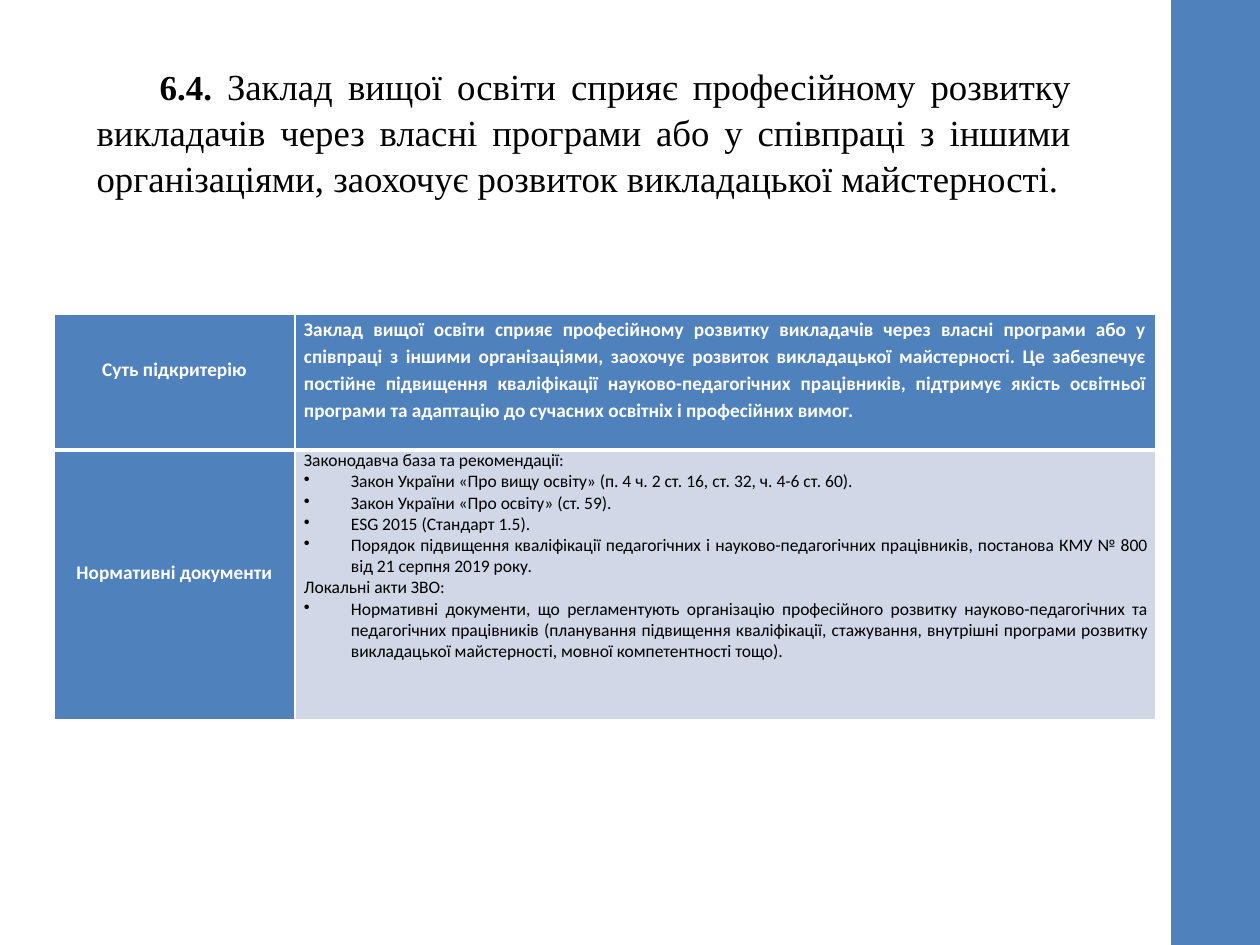
from dataclasses import dataclass

from lxml import etree
from pptx import Presentation
from pptx import util as u
from pptx.dml.color import RGBColor
from pptx.enum import shapes, text
from pptx.oxml import ns


@dataclass(frozen=True)
class Theme:
    blue: str = "4F81BD"
    pale: str = "D0D8E8"
    white: str = "FFFFFF"
    black: str = "000000"
    title_font: str = "Times New Roman"
    table_font: str = "Calibri"
    number_size: int = 20
    title_size: int = 21
    heading_size: int = 11
    list_size: int = 10


THEME = Theme()

NUMBER = "6.4. "
TITLE = (
    "Заклад вищої освіти сприяє професійному розвитку викладачів через власні "
    "програми або у співпраці з іншими організаціями, заохочує розвиток "
    "викладацької майстерності."
)
ESSENCE = TITLE + (
    " Це забезпечує постійне підвищення кваліфікації науково-педагогічних "
    "працівників, підтримує якість освітньої програми та адаптацію до сучасних "
    "освітніх і професійних вимог."
)
DOCUMENTS = {
    "Законодавча база та рекомендації:": [
        "Закон України «Про вищу освіту» (п. 4 ч. 2 ст. 16, ст. 32, ч. 4-6 ст. 60).",
        "Закон України «Про освіту» (ст. 59).",
        "ESG 2015 (Стандарт 1.5).",
        "Порядок підвищення кваліфікації педагогічних і науково-педагогічних "
        "працівників, постанова КМУ № 800 від 21 серпня 2019 року.",
    ],
    "Локальні акти ЗВО:": [
        "Нормативні документи, що регламентують організацію професійного розвитку "
        "науково-педагогічних та педагогічних працівників (планування підвищення "
        "кваліфікації, стажування, внутрішні програми розвитку викладацької "
        "майстерності, мовної компетентності тощо).",
    ],
}


def px(length):
    return u.Emu(round(length * 914400 / 126))


def style_font(font, face, size, color, bold=False):
    font.name, font.size, font.bold = face, u.Pt(size), bold
    font.color.rgb = RGBColor.from_string(color)


def add_title(slide):
    title = slide.shapes.title
    title.left, title.top, title.width, title.height = map(px, (84, 55, 1000, 208))
    frame = title.text_frame
    frame.word_wrap = True
    frame.auto_size = text.MSO_AUTO_SIZE.NONE
    frame.vertical_anchor = text.MSO_ANCHOR.TOP
    paragraph = frame.paragraphs[0]
    paragraph.alignment = text.PP_ALIGN.JUSTIFY
    paragraph.line_spacing = 1.05
    for words, size, bold in (
        ("\t" + NUMBER, THEME.number_size, True),
        (TITLE, THEME.title_size, False),
    ):
        run = paragraph.add_run()
        run.text = words
        style_font(run.font, THEME.title_font, size, THEME.black, bold)


def add_side_band(slide):
    band = slide.shapes.add_shape(
        shapes.MSO_SHAPE.RECTANGLE, *map(px, (743, 428, 945, 89))
    )
    band.rotation = 90
    band.shadow.inherit = False
    band.fill.solid()
    band.fill.fore_color.rgb = RGBColor.from_string(THEME.blue)
    band.line.fill.background()


def set_borders(cell, top, bottom):
    properties = cell._tc.get_or_add_tcPr()
    for side, width in (("L", 1), ("R", 1), ("T", top), ("B", bottom)):
        line = etree.SubElement(
            properties, ns.qn(f"a:ln{side}"), w=str(u.Pt(width))
        )
        fill = etree.SubElement(line, ns.qn("a:solidFill"))
        etree.SubElement(fill, ns.qn("a:srgbClr"), val=THEME.white)


def format_cell(cell, color, bottom_margin=0):
    cell.fill.solid()
    cell.fill.fore_color.rgb = RGBColor.from_string(color)
    cell.margin_left = cell.margin_right = px(9)
    cell.margin_top, cell.margin_bottom = 0, px(bottom_margin)


def write_heading(cell, words, alignment):
    paragraph = cell.text_frame.paragraphs[0]
    paragraph.text = words
    paragraph.alignment = alignment
    paragraph.line_spacing = 1.15
    style_font(
        paragraph.runs[0].font, THEME.table_font, THEME.heading_size, THEME.white, True
    )


def write_label(cell, words):
    """Centre a row label slightly above the middle of its cell."""
    format_cell(cell, THEME.blue, bottom_margin=27)
    cell.vertical_anchor = text.MSO_ANCHOR.MIDDLE
    write_heading(cell, words, text.PP_ALIGN.CENTER)


def add_bullet(paragraph):
    properties = paragraph._p.get_or_add_pPr()
    properties.set("marL", str(px(47)))
    properties.set("indent", str(px(-47)))
    etree.SubElement(properties, ns.qn("a:buChar"), char="•")
    tabs = etree.SubElement(properties, ns.qn("a:tabLst"))
    etree.SubElement(tabs, ns.qn("a:tab"), pos=str(px(63)), algn="l")


def write_documents(cell):
    format_cell(cell, THEME.pale)
    lines = []
    for group, items in DOCUMENTS.items():
        lines += [(group, False)] + [(item, True) for item in items]
    frame = cell.text_frame
    frame.text = "\n".join(words for words, _ in lines)
    for paragraph, (_, bulleted) in zip(frame.paragraphs, lines):
        paragraph.alignment = text.PP_ALIGN.JUSTIFY
        if bulleted:
            add_bullet(paragraph)
        style_font(
            paragraph.runs[0].font, THEME.table_font, THEME.list_size, THEME.black
        )


def add_criterion_table(slide):
    widths, heights = (241, 861), (136, 270)
    table = slide.shapes.add_table(
        2, 2, *map(px, (54, 314, sum(widths), sum(heights)))
    ).table
    table.horz_banding = False
    for column, width in zip(table.columns, widths):
        column.width = px(width)
    for row, height, top, bottom in zip(table.rows, heights, (1, 3), (3, 1)):
        row.height = px(height)
        for cell in row.cells:
            set_borders(cell, top, bottom)

    write_label(table.cell(0, 0), "Суть підкритерію")
    essence = table.cell(0, 1)
    format_cell(essence, THEME.blue)
    write_heading(essence, ESSENCE, text.PP_ALIGN.JUSTIFY)
    write_label(table.cell(1, 0), "Нормативні документи")
    write_documents(table.cell(1, 1))


def main():
    deck = Presentation()
    deck.slide_width, deck.slide_height = px(1260), px(945)
    slide = deck.slides.add_slide(deck.slide_layouts[5])
    add_title(slide)
    add_side_band(slide)
    add_criterion_table(slide)
    deck.save("out.pptx")


if __name__ == "__main__":
    main()
